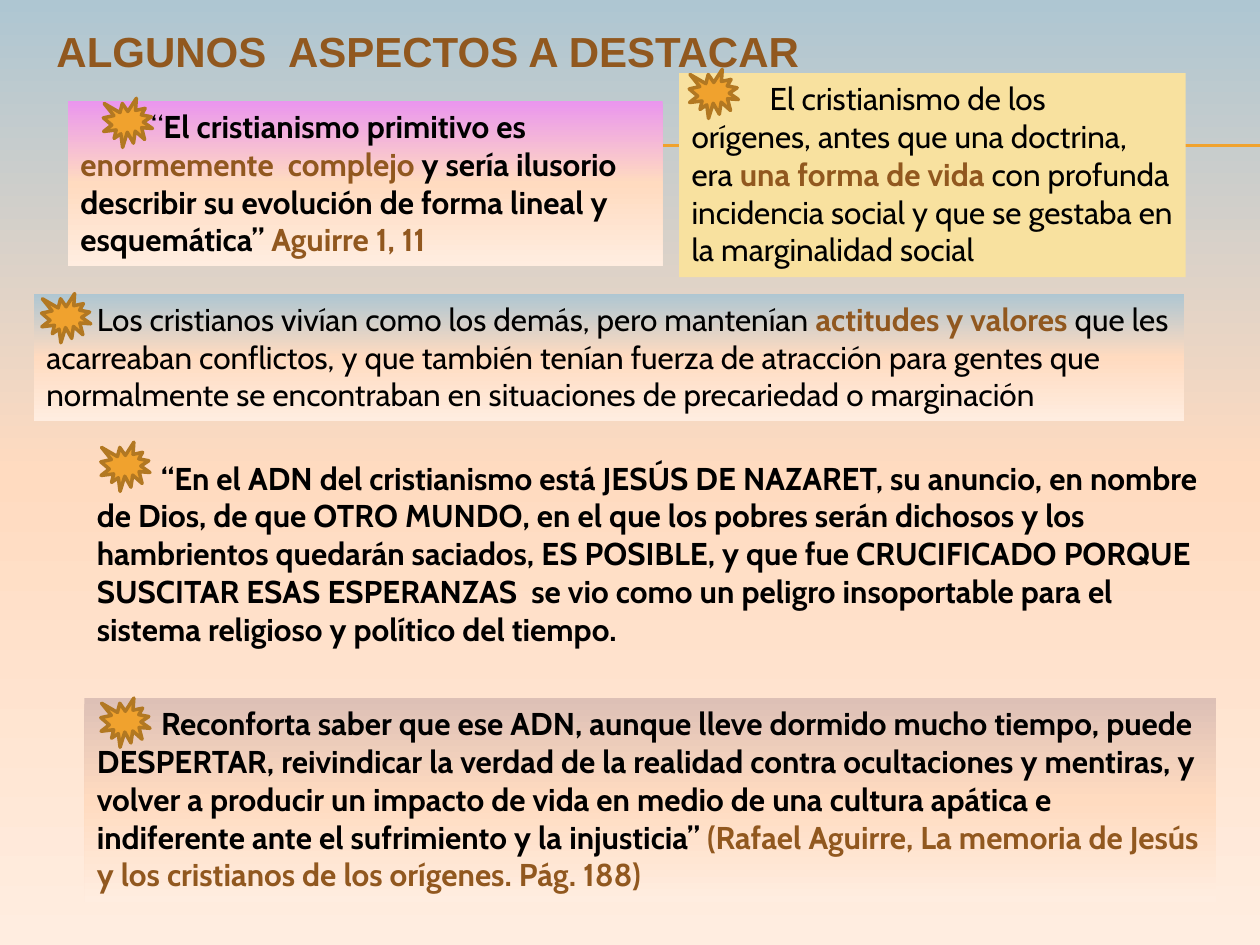
from copy import deepcopy

from lxml.etree import SubElement
from pptx import Presentation
from pptx.dml.color import RGBColor as Color
from pptx.enum.shapes import MSO_CONNECTOR as Connector, MSO_SHAPE as Preset
from pptx.enum.text import MSO_ANCHOR as Anchor, PP_ALIGN as Align
from pptx.oxml.ns import qn
from pptx.util import Inches, Pt

# Grid of 100 columns by 75 rows; boxes are (column, row, columns, rows)
COLUMNS, ROWS = 100, 75
WIDTH, HEIGHT = Inches(10), Inches(7.5)
STAR_SIZE = 3.9

COLORS = {
    "text": "000000", "brown": "91581F", "orange": "F0A22E", "star_edge": "B27822",
    "sky": "AEC6D2", "peach": "FFDBC0", "cream": "FFEDE0",
    "rose": "DDC0B6", "violet": "EA96EE", "yellow": "F8E19F",
}

PLAIN = {"name": "Cabin", "size": Pt(18), "bold": False, "color": "text"}
STRONG = {**PLAIN, "bold": True}
ACCENT = {**STRONG, "color": "brown"}
HEADING = {**ACCENT, "name": "Arial", "size": Pt(24)}
LINE_BREAK = ("\n", PLAIN)

# Each panel: box, top fill ("gradient" start or "solid"), star corner, indent, runs
PANELS = [
    {"box": (6.7, 55.4, 89.8, 16.2), "gradient": "rose", "star": (8, 55.4), "indent": 5.1,
     "runs": [
         ("Reconforta saber que ese ADN, aunque lleve dormido mucho tiempo, puede "
          "DESPERTAR, reivindicar la verdad de la realidad contra ocultaciones y "
          "mentiras, y volver a producir un impacto de vida en medio de una cultura "
          "apática e indiferente ante el sufrimiento y la injusticia” ", STRONG),
         ("(Rafael Aguirre, La memoria de Jesús y los cristianos de los orígenes. "
          "Pág. 188)", ACCENT)]},
    {"box": (6.7, 35.9, 89.8, 16.2), "star": (8, 35.1), "indent": 5.1,
     "runs": [
         ("“En el ADN del cristianismo está JESÚS DE NAZARET, su anuncio, en nombre "
          "de Dios, de que OTRO MUNDO, en el que los pobres serán dichosos y los "
          "hambrientos quedarán saciados, ES POSIBLE, y que fue CRUCIFICADO PORQUE "
          "SUSCITAR ESAS ESPERANZAS  se vio como un peligro insoportable para el "
          "sistema religioso y político del tiempo.", STRONG)]},
    {"box": (5.4, 8, 47.2, 13.1), "gradient": "violet", "star": (8.2, 7.8), "indent": 5.6,
     "runs": [
         ("“", PLAIN),
         ("El cristianismo primitivo es ", STRONG),
         ("enormemente  complejo ", ACCENT),
         ("y sería ilusorio describir su evolución de forma lineal y esquemática” ",
          STRONG),
         ("Aguirre 1, 11", ACCENT)]},
    {"box": (53.9, 5.8, 40.2, 16.2), "solid": "yellow", "star": (54.7, 5.5), "indent": 6.2,
     "runs": [
         ("El cristianismo de los", PLAIN),
         LINE_BREAK,
         ("orígenes, antes que una doctrina, era ", PLAIN),
         ("una forma de vida ", ACCENT),
         ("con profunda incidencia social y que se gestaba en la marginalidad social",
          PLAIN)]},
    {"box": (2.7, 23.3, 91.3, 10.1), "gradient": "sky", "star": (3.3, 23.3), "indent": 4,
     "runs": [
         ("Los cristianos vivían como los demás, pero mantenían ", PLAIN),
         ("actitudes y valores ", ACCENT),
         ("que les acarreaban conflictos, y que también tenían fuerza de atracción "
          "para gentes que normalmente se encontraban en situaciones de precariedad "
          "o marginación", PLAIN)]},
]


def across(columns):
    return int(WIDTH * columns / COLUMNS)


def down(rows):
    return int(HEIGHT * rows / ROWS)


def place(box):
    left, top, width, height = box
    return across(left), down(top), across(width), down(height)


def color(name):
    return Color.from_string(COLORS[name])


def fill_gradient(fill, element, start):
    """Vertical three-stop gradient from the start colour to cream."""
    fill.gradient()
    fill.gradient_angle = 270
    stop_list = element.find(".//" + qn("a:gsLst"))
    stop_list.insert(1, deepcopy(stop_list[0]))
    for stop, position, name in zip(fill.gradient_stops, (0, 0.5, 1),
                                    (start, "peach", "cream")):
        stop.position = position
        stop.color.rgb = color(name)


def write(shape, runs, indent=0):
    frame = shape.text_frame
    frame.word_wrap = True
    frame.vertical_anchor = Anchor.TOP
    paragraph = frame.paragraphs[0]
    paragraph.alignment = Align.LEFT
    paragraph._p.get_or_add_pPr().set("indent", str(across(indent)))
    for text, style in runs:
        if text == "\n":
            paragraph.add_line_break()
            continue
        run = paragraph.add_run()
        run.text = text
        for attribute, value in style.items():
            if attribute == "color":
                run.font.color.rgb = color(value)
            else:
                setattr(run.font, attribute, value)


def add_divider(slide, left, right, row):
    line = slide.shapes.add_connector(Connector.STRAIGHT, across(left), down(row),
                                      across(right), down(row))
    line.line.color.rgb = color("orange")
    line.line.width = Pt(0.75)
    SubElement(line._element.spPr, qn("a:effectLst"))


def add_title(slide, box):
    title = slide.shapes.add_textbox(*place(box))
    write(title, [("ALGUNOS  ASPECTOS A DESTACAR", HEADING)])


def add_star(slide, corner):
    star = slide.shapes.add_shape(Preset.EXPLOSION1,
                                  *place((*corner, STAR_SIZE, STAR_SIZE)))
    star.shadow.inherit = False
    star.fill.solid()
    star.fill.fore_color.rgb = color("orange")
    star.line.color.rgb = color("star_edge")
    star.line.width = Pt(2)


def add_panel(slide, box, star, indent, runs, gradient=None, solid=None):
    if gradient or solid:
        panel = slide.shapes.add_shape(Preset.RECTANGLE, *place(box))
        panel.shadow.inherit = False
        panel.line.fill.background()
    else:
        panel = slide.shapes.add_textbox(*place(box))
    if gradient:
        fill_gradient(panel.fill, panel._element, gradient)
    elif solid:
        panel.fill.solid()
        panel.fill.fore_color.rgb = color(solid)
    write(panel, runs, indent)
    add_star(slide, star)


def main():
    presentation = Presentation()
    presentation.slide_width, presentation.slide_height = WIDTH, HEIGHT
    slide = presentation.slides.add_slide(presentation.slide_layouts[6])

    # Background and divider lines
    fill_gradient(slide.background.fill, slide._element, "sky")
    for row in (11.5, 11.6):
        add_divider(slide, 5.6, COLUMNS, row)

    # Title and starred panels
    add_title(slide, (3.5, 1.5, 63, 5))
    for panel in PANELS:
        add_panel(slide, **panel)

    presentation.save("out.pptx")


if __name__ == "__main__":
    main()
